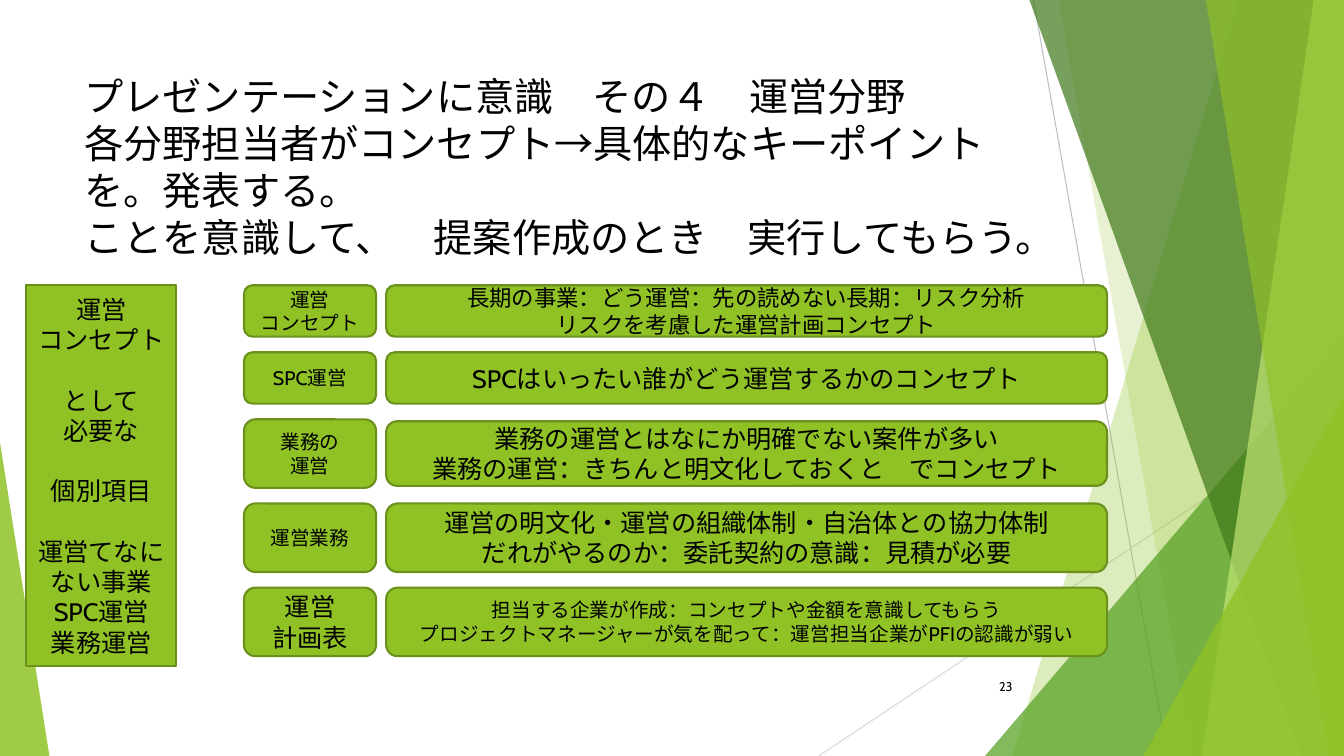
from lxml.etree import SubElement
from pptx import Presentation
from pptx.dml.color import RGBColor
from pptx.enum.shapes import MSO_CONNECTOR, MSO_SHAPE
from pptx.enum.text import MSO_ANCHOR, PP_ALIGN
from pptx.oxml.ns import qn
from pptx.util import Inches, Pt

WIDTH, HEIGHT = 13.33, 7.5
FONT = "Cabin"
COLORS = {
    "text": "000000", "lime": "90C226", "border": "6B901C", "green": "54A021",
    "forest": "3F7819", "pale": "C0E474", "line": "BFBFBF", "faint": "D9D9D9",
}

# Facets reaching the right edge: top x, bottom x, colour, opacity in percent
FACETS = [
    (12.28, 10.04, "lime", 30),
    (10.5, 11.83, "lime", 20),
    ("triangle", (9.77, 3.33, 3.56, 4.17), "green", 72),
    (10.21, 12.91, "forest", 70),
    (13.03, 11.92, "pale", 70),
    (11.96, 13.18, "lime", 65),
    ("triangle", (11.34, 3.93, 1.99, 3.57), "lime", 80),
]

TITLE = [
    "プレゼンテーションに意識　その４　運営分野",
    "各分野担当者がコンセプト→具体的なキーポイント",
    "を。発表する。",
    "ことを意識して、　提案作成のとき　実行してもらう。",
]

CONCEPT_GROUPS = [
    ["運営", "コンセプト"],
    ["として", "必要な"],
    ["個別項目"],
    ["運営てなに", "ない事業", "SPC運営", "業務運営"],
]

# Label, label size, detail, detail size, row height, detail height
ROWS = [
    (["運営", "コンセプト"], 14,
     ["長期の事業：どう運営：先の読めない長期：リスク分析",
      "リスクを考慮した運営計画コンセプト"], 16, 0.51, 0.51),
    (["SPC運営"], 14,
     ["SPCはいったい誰がどう運営するかのコンセプト"], 18, 0.51, 0.51),
    (["業務の", "運営"], 14,
     ["業務の運営とはなにか明確でない案件が多い",
      "業務の運営：きちんと明文化しておくと　でコンセプト"], 18, 0.68, 0.64),
    (["運営業務"], 14,
     ["運営の明文化・運営の組織体制・自治体との協力体制",
      "だれがやるのか：委託契約の意識：見積が必要"], 18, 0.68, 0.68),
    (["運営", "計画表"], 18,
     ["担当する企業が作成：コンセプトや金額を意識してもらう",
      "プロジェクトマネージャーが気を配って：運営担当企業がPFIの認識が弱い"],
     14, 0.68, 0.68),
]


def rgb(name):
    return RGBColor.from_string(COLORS[name])


def inches(*values):
    return [Inches(v) for v in values]


def write(sp, lines, size, align, anchor=MSO_ANCHOR.MIDDLE):
    tf = sp.text_frame
    tf.word_wrap = True
    tf.vertical_anchor = anchor
    tf.text = "\n".join(lines)
    for p in tf.paragraphs:
        p.alignment = align
        for r in p.runs:
            r.font.size = Pt(size)
            r.font.name = FONT
            r.font.color.rgb = rgb("text")


def paint_facet(sp, color, opacity):
    sp.shadow.inherit = False
    sp.fill.solid()
    sp.fill.fore_color.rgb = rgb(color)
    sp.line.fill.background()
    clr = sp.fill._xPr.find(qn("a:solidFill"))[0]
    SubElement(clr, qn("a:alpha"), val=str(opacity * 1000))


def add_triangle(s, box, apex, color, opacity):
    sp = s.shapes.add_shape(MSO_SHAPE.ISOSCELES_TRIANGLE, *inches(*box))
    sp.adjustments[0] = apex
    paint_facet(sp, color, opacity)


def add_background(s, right, bottom):
    # Thin crossing lines
    for ends, color in (((10.25, 0, 11.58, bottom), "line"),
                        ((right, 4.03, 8.12, bottom), "faint")):
        line = s.shapes.add_connector(MSO_CONNECTOR.STRAIGHT, *inches(*ends))
        line.line.color.rgb = rgb(color)
        line.line.width = Pt(0.75)
        SubElement(line._element.spPr, qn("a:effectLst"))

    # Translucent facets on the right
    for first, second, color, opacity in FACETS:
        if first == "triangle":
            add_triangle(s, second, 1, color, opacity)
            continue
        outline = s.shapes.build_freeform(*inches(first, 0))
        corners = [(right, 0), (right, bottom), (second, bottom)]
        outline.add_line_segments([inches(*c) for c in corners], close=True)
        paint_facet(outline.convert_to_shape(), color, opacity)

    # Left wedge
    add_triangle(s, (0, bottom - 3.11, 0.49, 3.11), 0, "lime", 85)


def add_text(s, box, lines, size, align, anchor):
    sp = s.shapes.add_textbox(*inches(*box))
    write(sp, lines, size, align, anchor)


def add_box(s, kind, box, lines, size):
    sp = s.shapes.add_shape(kind, *inches(*box))
    sp.shadow.inherit = False
    sp.fill.solid()
    sp.fill.fore_color.rgb = rgb("lime")
    sp.line.color.rgb = rgb("border")
    sp.line.width = Pt(1.5)
    write(sp, lines, size, PP_ALIGN.CENTER)
    return sp


def add_concept_column(s, box):
    lines = [line for group in CONCEPT_GROUPS for line in group]
    sp = add_box(s, MSO_SHAPE.RECTANGLE, box, lines, 18)
    # A one-line gap opens every group after the first
    start = 0
    for group in CONCEPT_GROUPS[:-1]:
        start += len(group)
        sp.text_frame.paragraphs[start].space_before = Pt(21.6)


def add_rows(s, left, top, width, height):
    label_w, detail_x = 1.31, 1.41
    gap = (height - sum(row[4] for row in ROWS)) / (len(ROWS) - 1)
    for label, label_size, detail, detail_size, row_h, detail_h in ROWS:
        add_box(s, MSO_SHAPE.ROUNDED_RECTANGLE, (left, top, label_w, row_h),
                label, label_size)
        add_box(s, MSO_SHAPE.ROUNDED_RECTANGLE,
                (left + detail_x, top + (row_h - detail_h) / 2,
                 width - detail_x, detail_h), detail, detail_size)
        top += row_h + gap


def main():
    prs = Presentation()
    prs.slide_width, prs.slide_height = inches(WIDTH, HEIGHT)
    s = prs.slides.add_slide(prs.slide_layouts[6])
    add_background(s, WIDTH, HEIGHT)
    # Title and slide number
    add_text(s, (0.74, 0.67, 9.77, 2.16), TITLE, 28, PP_ALIGN.LEFT, MSO_ANCHOR.TOP)
    add_text(s, (9.39, 6.61, 0.75, 0.4), ["23"], 9, PP_ALIGN.RIGHT, MSO_ANCHOR.MIDDLE)
    # Concept column and its items
    add_concept_column(s, (0.26, 2.83, 1.49, 3.78))
    add_rows(s, 2.42, 2.83, 8.56, 3.68)
    prs.save("out.pptx")


if __name__ == "__main__":
    main()
